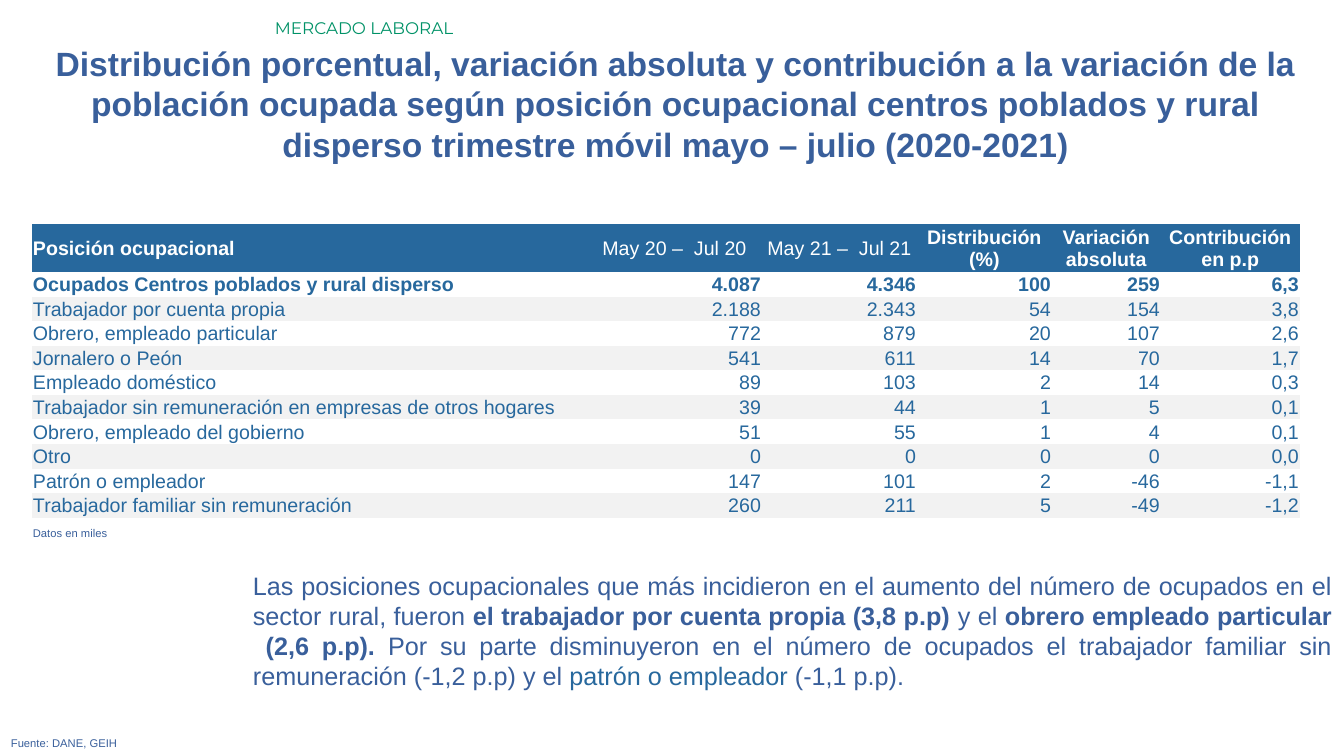
from pptx import Presentation
from pptx.dml.color import RGBColor
from pptx.enum.text import MSO_ANCHOR, MSO_AUTO_SIZE, PP_ALIGN as Align
from pptx.util import Inches, Pt

BLUE = RGBColor(0x39, 0x5F, 0x9B)
TABLE_BLUE = RGBColor(0x27, 0x68, 0x9D)
GREEN = RGBColor(0x00, 0x92, 0x67)
BAND = RGBColor(0xF2, 0xF2, 0xF2)
WHITE = RGBColor(0xFF, 0xFF, 0xFF)

PX_PER_INCH = 100.8
NO_GRID_STYLE = "{2D5ABB26-0587-4C30-8999-92F81FD0307C}"

TITLE = (
    "Distribución porcentual, variación absoluta y contribución a la variación "
    "de la población ocupada según posición ocupacional centros poblados y rural "
    "disperso trimestre móvil mayo – julio (2020-2021)"
)
COMMENT = [
    ("Las posiciones ocupacionales que más incidieron en el aumento del número "
     "de ocupados en el sector rural, fueron ", BLUE, False),
    ("el trabajador por cuenta propia (3,8 p.p) ", BLUE, True),
    ("y el ", BLUE, False),
    ("obrero empleado particular  (2,6 p.p). ", BLUE, True),
    ("Por su parte disminuyeron en el número de ocupados el trabajador familiar "
     "sin remuneración (-1,2 p.p) y el ", BLUE, False),
    ("patrón o empleador ", TABLE_BLUE, False),
    ("(-1,1 p.p).", BLUE, False),
]

COLUMN_WIDTHS = [555, 175, 155, 135, 109, 139]
HEADER = ["Posición ocupacional", "May 20 –  Jul 20", "May 21 –  Jul 21",
          "Distribución (%)", "Variación absoluta", "Contribución en p.p"]
PERIOD_COLUMNS = (1, 2)
OCCUPATIONS = [
    ["Ocupados Centros poblados y rural disperso", "4.087", "4.346", "100", "259", "6,3"],
    ["Trabajador por cuenta propia", "2.188", "2.343", "54", "154", "3,8"],
    ["Obrero, empleado particular", "772", "879", "20", "107", "2,6"],
    ["Jornalero o Peón", "541", "611", "14", "70", "1,7"],
    ["Empleado doméstico", "89", "103", "2", "14", "0,3"],
    ["Trabajador sin remuneración en empresas de otros hogares", "39", "44", "1", "5", "0,1"],
    ["Obrero, empleado del gobierno", "51", "55", "1", "4", "0,1"],
    ["Otro", "0", "0", "0", "0", "0,0"],
    ["Patrón o empleador", "147", "101", "2", "-46", "-1,1"],
    ["Trabajador familiar sin remuneración", "260", "211", "5", "-49", "-1,2"],
]


def px(length):
    return round(length * Inches(1) / PX_PER_INCH)


def add_span(para, text, size, color, bold=False, font="Arial"):
    span = para.add_run()
    span.text = text
    span.font.name = font
    span.font.size = Pt(size)
    span.font.bold = bold
    span.font.color.rgb = color


def add_text(page, area, spans, size, align=Align.JUSTIFY, font="Arial"):
    """Add a wrapping one-paragraph box from (text, colour, bold) spans."""
    box = page.shapes.add_textbox(*map(px, area))
    frame = box.text_frame
    frame.word_wrap = True
    frame.auto_size = MSO_AUTO_SIZE.SHAPE_TO_FIT_TEXT
    para = frame.paragraphs[0]
    para.alignment = align
    for text, color, bold in spans:
        add_span(para, text, size, color, bold, font)


def fill_cell(cell, text, align, color, bold, fill):
    cell.margin_left = cell.margin_right = cell.margin_top = px(1)
    cell.margin_bottom = 0
    cell.vertical_anchor = MSO_ANCHOR.MIDDLE
    if fill is None:
        cell.fill.background()
    else:
        cell.fill.solid()
        cell.fill.fore_color.rgb = fill
    para = cell.text_frame.paragraphs[0]
    para.alignment = align
    add_span(para, text, 14, color, bold)


def add_occupation_table(page):
    rows = [HEADER] + OCCUPATIONS
    holder = page.shapes.add_table(
        len(rows), len(HEADER), px(32), px(224), px(sum(COLUMN_WIDTHS)), px(293))
    table = holder.table
    table.first_row = table.horz_banding = False
    table._tbl.tblPr[0].text = NO_GRID_STYLE
    for column, width in zip(table.columns, COLUMN_WIDTHS):
        column.width = px(width)
    for r, values in enumerate(rows):
        table.rows[r].height = px(21 if r else 40)
        for c, text in enumerate(values):
            if r == 0:
                align, color, fill = Align.CENTER, WHITE, TABLE_BLUE
                bold = c not in PERIOD_COLUMNS
            else:
                align, color = Align.RIGHT, TABLE_BLUE
                fill = None if r % 2 else BAND
                bold = r == 1
            if c == 0:
                align = Align.LEFT
            fill_cell(table.cell(r, c), text, align, color, bold, fill)
    holder.height = px(293)


def main():
    deck = Presentation()
    deck.slide_width, deck.slide_height = px(1344), px(756)
    page = deck.slides.add_slide(deck.slide_layouts[6])

    add_text(page, (45, 38, 1261, 132), [(TITLE, BLUE, True)], 24, Align.CENTER)
    add_text(page, (265, 13, 1079, 30), [("MERCADO LABORAL", GREEN, False)], 12,
             Align.LEFT, "Montserrat")
    add_text(page, (243, 565, 1099, 132), COMMENT, 18)
    add_text(page, (1, 731, 1301, 24), [("Fuente: DANE, GEIH", BLUE, False)], 8)
    add_occupation_table(page)
    add_text(page, (23, 521, 1272, 24), [("Datos en miles", BLUE, False)], 8)

    deck.save("out.pptx")


if __name__ == "__main__":
    main()
